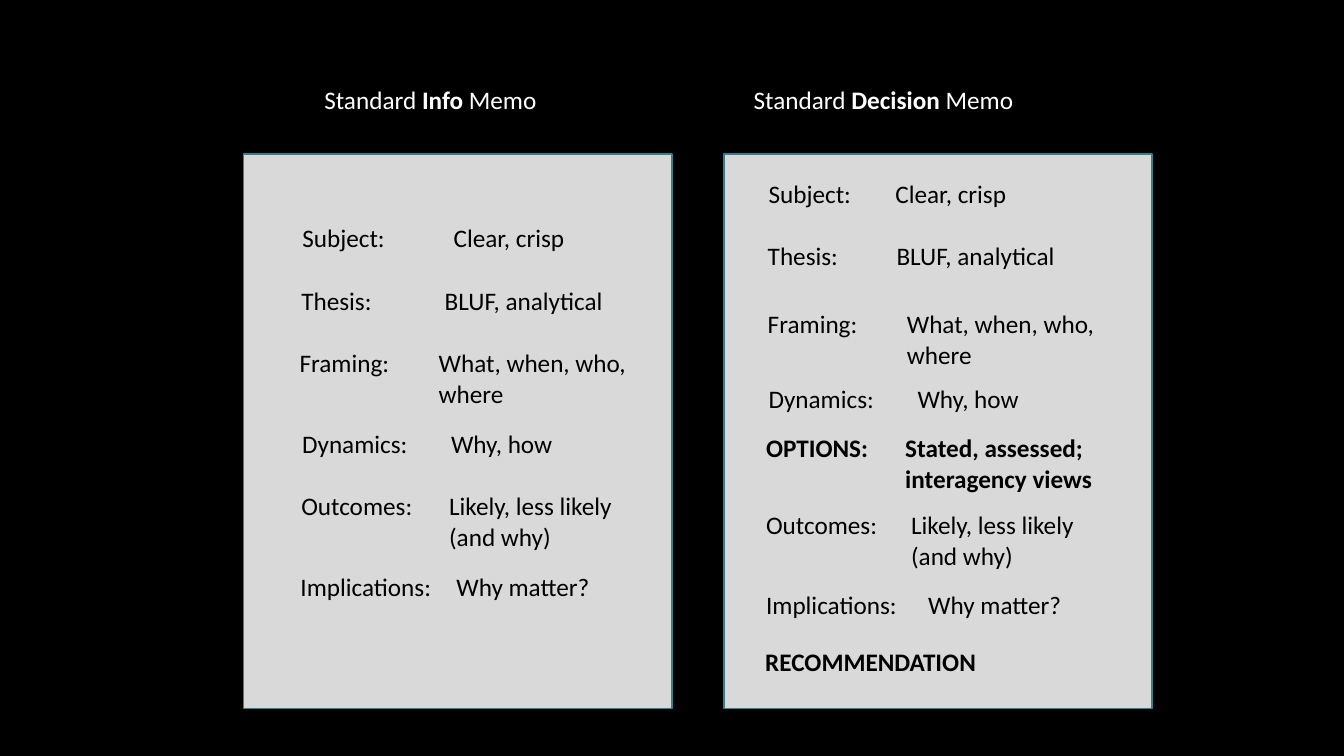
import pptx
import pptx.dml.color
import pptx.enum.shapes
import pptx.oxml
import pptx.oxml.ns
import pptx.util
from dataclasses import dataclass

Pt = pptx.util.Pt
RGB = pptx.dml.color.RGBColor.from_string


@dataclass
class Theme:
    back: str = "000000"
    card: str = "D9D9D9"
    edge: str = "30818C"
    head: str = "FFFFFF"
    ink: str = "000000"
    font: str = "Calibri"
    size: int = 18


theme = Theme()


def write(para, text, color=theme.ink, bold=False):
    run = para.add_run()
    run.text = text
    run.font.name = theme.font
    run.font.size = Pt(theme.size)
    run.font.bold = bold
    run.font.color.rgb = RGB(color)


def clear(cell):
    """Remove the borders and the fill of a table cell."""
    props = cell._tc.get_or_add_tcPr()
    for side in "LRTB":
        line = pptx.oxml.parse_xml(
            f'<a:ln{side} {pptx.oxml.ns.nsdecls("a")} w="0"><a:noFill/></a:ln{side}>')
        props.append(line)
    cell.fill.background()


deck = pptx.Presentation()
deck.slide_width, deck.slide_height = Pt(960), Pt(540)
slide = deck.slides.add_slide(deck.slide_layouts[6])
slide.background.fill.solid()
slide.background.fill.fore_color.rgb = RGB(theme.back)

# Each memo: kind, title left, title width, card left
memos = [("Info", 224.6, 169, 174), ("Decision", 531.2, 207, 517)]
for kind, left, width, edge in memos:
    box = slide.shapes.add_textbox(Pt(left), Pt(57), Pt(width), Pt(29))
    box.text_frame.word_wrap = False
    para = box.text_frame.paragraphs[0]
    write(para, "Standard ", color=theme.head)
    write(para, kind, color=theme.head, bold=True)
    write(para, " Memo", color=theme.head)

    card = slide.shapes.add_shape(
        pptx.enum.shapes.MSO_SHAPE.RECTANGLE, Pt(edge), Pt(110), Pt(306), Pt(396))
    card.shadow.inherit = False
    card.fill.solid()
    card.fill.fore_color.rgb = RGB(theme.card)
    card.line.color.rgb = RGB(theme.edge)
    card.line.width = Pt(1)

says = {
    "Subject:": "Clear, crisp",
    "Thesis:": "BLUF, analytical",
    "Framing:": "What, when, who, where",
    "Dynamics:": "Why, how",
    "OPTIONS:": "Stated, assessed; interagency views",
    "Outcomes:": "Likely, less likely (and why)",
    "Implications:": "Why matter?",
}

# Each row: label, left, top, height, column widths
rows = [
    ("Subject:", 208.8, 156.2, 29.5, [108, 128]),
    ("Thesis:", 208, 200.9, 29.5, [102.4, 134]),
    ("Framing:", 206.8, 245.5, 29.5, [99.4, 160.6]),
    ("Dynamics:", 208.6, 303.1, 29.5, [106.4, 130.4]),
    ("Outcomes:", 208, 347.8, 29.5, [105.6, 144]),
    ("Implications:", 207.4, 405.4, 28.8, [111.4, 125.4]),
    ("Subject:", 541.8, 124.6, 29.5, [90.6, 112.4]),
    ("Thesis:", 541.2, 169.2, 29.5, [92, 144.8]),
    ("Framing:", 541.2, 217.4, 29.5, [99.4, 160.6]),
    ("Dynamics:", 541.8, 271.2, 29.5, [106.4, 130.4]),
    ("OPTIONS:", 540, 306, 29.5, [99.4, 160.6]),
    ("Outcomes:", 540, 361.4, 29.5, [103.6, 156.4]),
    ("Implications:", 540, 418.4, 33.8, [115.8, 121]),
    ("RECOMMENDATION", 539.4, 458.9, 29.5, [260]),
]
for label, left, top, height, widths in rows:
    frame = slide.shapes.add_table(
        1, len(widths), Pt(left), Pt(top), Pt(sum(widths)), Pt(height))
    table = frame.table
    table.first_row = table.horz_banding = False
    texts = [label, says.get(label)]
    for col, width in enumerate(widths):
        table.columns[col].width = Pt(width)
        cell = table.cell(0, col)
        clear(cell)
        write(cell.text_frame.paragraphs[0], texts[col], bold=label.isupper())

deck.save("out.pptx")
